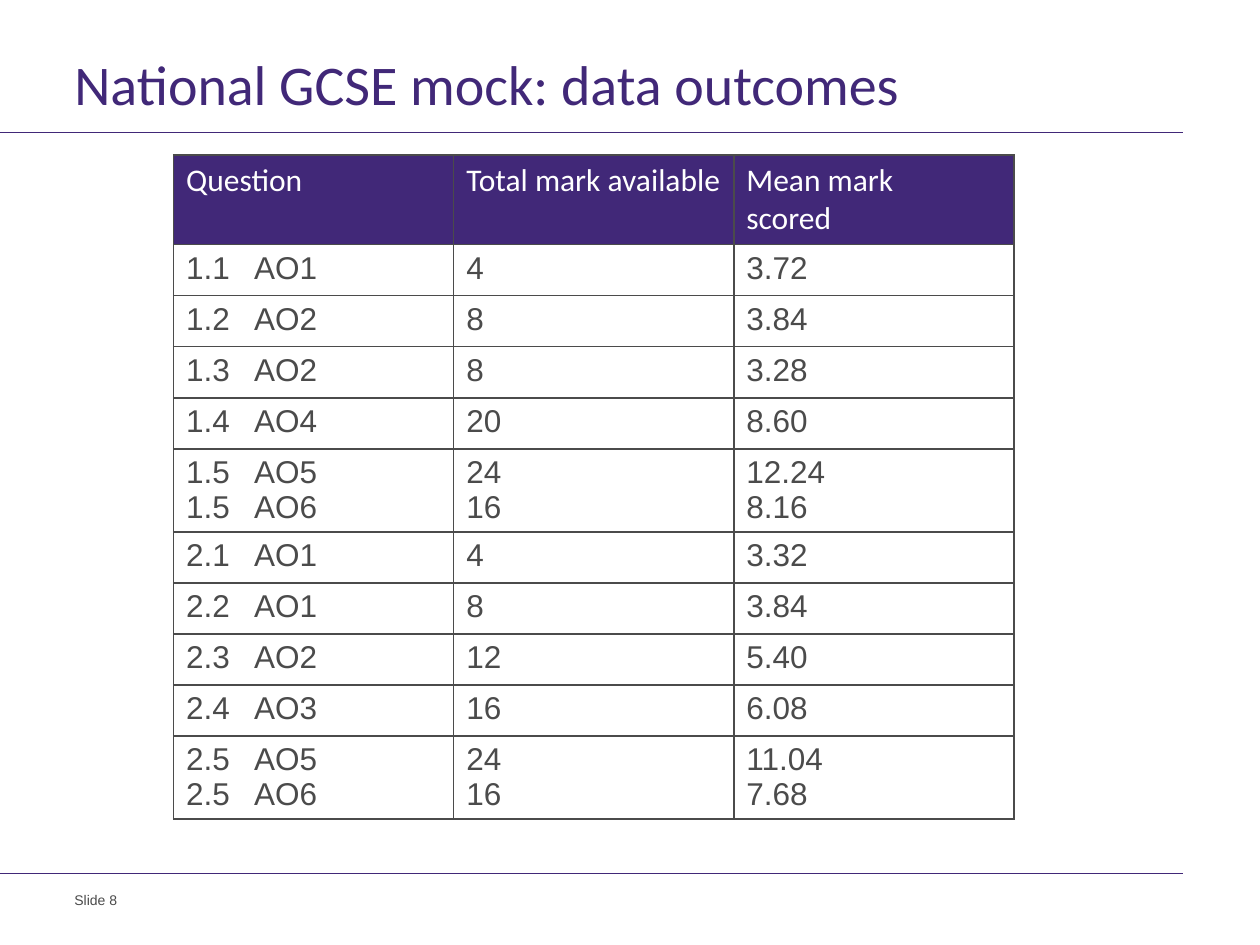
from lxml.etree import SubElement
from pptx import Presentation
from pptx.dml.color import RGBColor
from pptx.enum.shapes import MSO_CONNECTOR
from pptx.enum.text import MSO_ANCHOR
from pptx.oxml.ns import qn
from pptx.util import Cm, Pt

PURPLE, GREY, WHITE = "412878", "4B4B4B", "FFFFFF"
HEADINGS = ["Question", "Total mark available", "Mean mark\nscored"]
RESULTS = [
    ["1.1\tAO1", "4", "3.72"],
    ["1.2\tAO2", "8", "3.84"],
    ["1.3\tAO2", "8", "3.28"],
    ["1.4\tAO4", "20", "8.60"],
    ["1.5\tAO5\n1.5\tAO6", "24\n16", "12.24\n8.16"],
    ["2.1\tAO1", "4", "3.32"],
    ["2.2\tAO1", "8", "3.84"],
    ["2.3\tAO2", "12", "5.40"],
    ["2.4\tAO3", "16", "6.08"],
    ["2.5\tAO5\n2.5\tAO6", "24\n16", "11.04\n7.68"],
]


def colour(value):
    """Turn a hex string into a colour."""
    return RGBColor.from_string(value)


def style_font(para, name, size, value):
    """Set the font of every run in a paragraph."""
    for span in para.runs:
        span.font.name = name
        span.font.size = Pt(size)
        span.font.color.rgb = colour(value)


def add_rule(page, left, top, width):
    """Draw a thin horizontal line."""
    rule = page.shapes.add_connector(
        MSO_CONNECTOR.STRAIGHT, Cm(left), Cm(top), Cm(left + width), Cm(top))
    rule.line.color.rgb = colour(PURPLE)
    rule.line.width = Pt(0.6)
    SubElement(rule._element.spPr, qn("a:effectLst"))


def add_label(page, left, top, width, height, text, name, size, value, spacing, anchor):
    """Place one line of text in a box without margins."""
    box = page.shapes.add_textbox(Cm(left), Cm(top), Cm(width), Cm(height))
    frame = box.text_frame
    frame.word_wrap = True
    frame.vertical_anchor = anchor
    frame.margin_left = frame.margin_right = frame.margin_top = frame.margin_bottom = 0
    frame.text = text
    para = frame.paragraphs[0]
    para.line_spacing = Pt(spacing)
    style_font(para, name, size, value)


def add_title(page, left, top, width, height):
    """Place the title with the rule below it."""
    add_label(page, left, top, width, height, "National GCSE mock: data outcomes",
              "Calibri", 32, PURPLE, 28, MSO_ANCHOR.MIDDLE)
    add_rule(page, 0, top + 1.4, left + width)


def add_footer(page, left, top, width, height):
    """Place the slide number with the rule above it."""
    add_rule(page, 0, top, left + width)
    add_label(page, left, top + 0.36, 1.5, height - 0.36, "Slide 8",
              "Arial", 8, GREY, 10, MSO_ANCHOR.TOP)


def add_borders(cell):
    """Outline the four sides of a cell."""
    properties = cell._tc.get_or_add_tcPr()
    for index, side in enumerate(("a:lnL", "a:lnR", "a:lnT", "a:lnB")):
        line = properties.makeelement(qn(side), {"w": str(Pt(1))})
        fill = SubElement(line, qn("a:solidFill"))
        SubElement(fill, qn("a:srgbClr"), val=GREY)
        properties.insert(index, line)


def add_tab_stop(para, position):
    """Give a paragraph one left tab stop."""
    stops = SubElement(para._p.get_or_add_pPr(), qn("a:tabLst"))
    SubElement(stops, qn("a:tab"), pos=str(Cm(position)), algn="l")


def fill_cell(cell, text, heading):
    """Write and format one table cell."""
    cell.text_frame.text = text
    for para in cell.text_frame.paragraphs:
        if "\t" in para.text:
            add_tab_stop(para, 1.37)
        if not heading:
            para.line_spacing = Pt(20)
        style_font(para, "Calibri" if heading else "Arial", 18, WHITE if heading else GREY)
    if heading:
        cell.fill.solid()
        cell.fill.fore_color.rgb = colour(PURPLE)
    else:
        cell.fill.background()
    add_borders(cell)


def add_results(page, left, top, width):
    """Build the table of marks."""
    rows = [HEADINGS] + RESULTS
    heights = [1.81] + [1.67 if "\n" in row[0] else 1.03 for row in RESULTS]
    table = page.shapes.add_table(len(rows), len(HEADINGS), Cm(left), Cm(top),
                                  Cm(width), Cm(sum(heights))).table
    table.horz_banding = False
    for index, (row, height) in enumerate(zip(rows, heights)):
        table.rows[index].height = Cm(height)
        for cell, text in zip(table.rows[index].cells, row):
            fill_cell(cell, text, index == 0)


def main():
    """Build and save the slide."""
    deck = Presentation()
    deck.slide_width, deck.slide_height = Cm(25.4), Cm(19.05)
    page = deck.slides.add_slide(deck.slide_layouts[6])
    add_title(page, 1.5, 1.27, 22.35, 1.19)
    add_results(page, 3.5, 3.12, 16.94)
    add_footer(page, 1.5, 17.6, 22.35, 1.02)
    deck.save("out.pptx")


if __name__ == "__main__":
    main()
